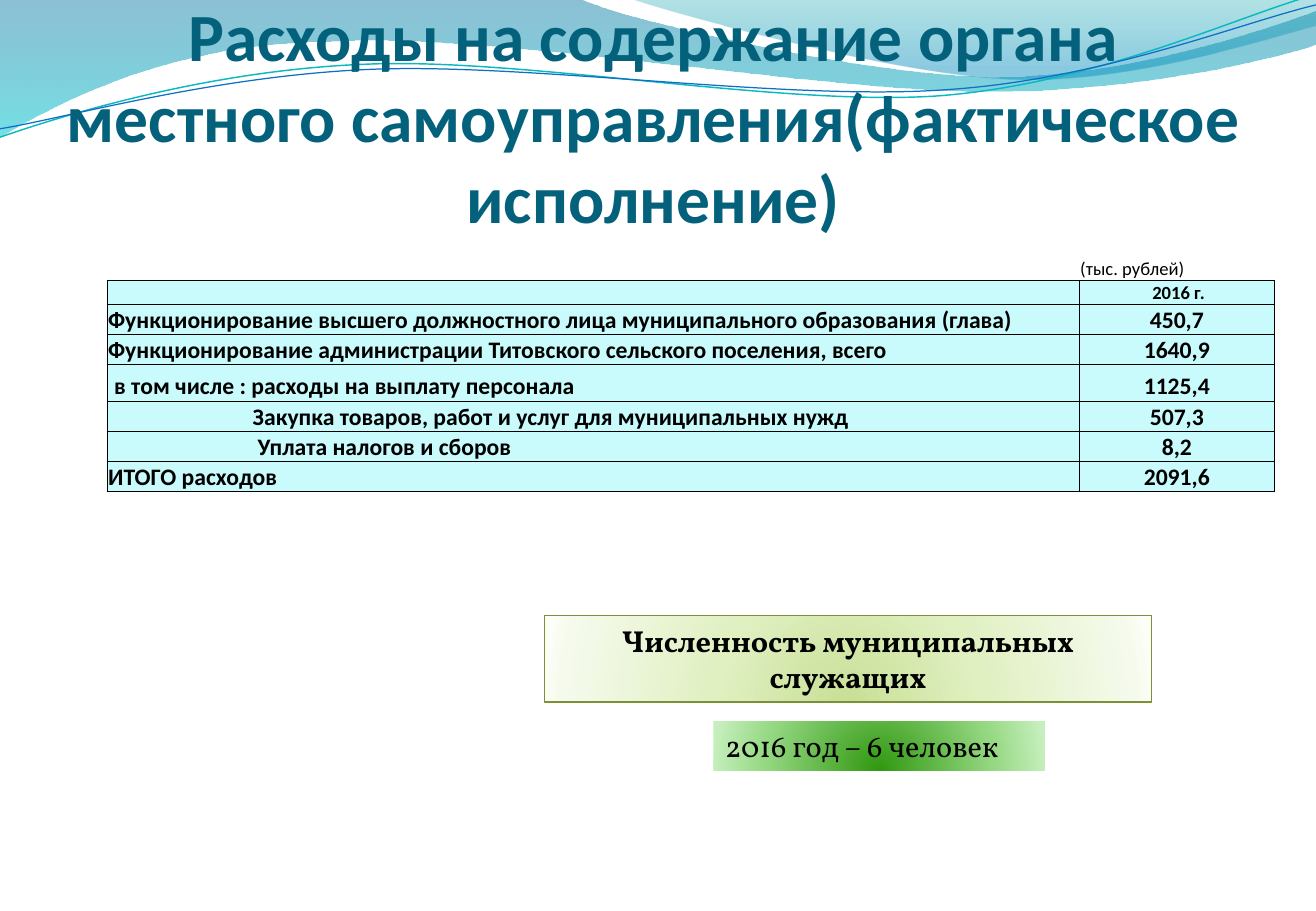
import pptx
import pptx.util
import pptx.dml.color
import pptx.enum.shapes
import pptx.enum.text
from lxml import etree
from pptx.oxml.ns import qn
from pptx.util import Inches

COLORS = {
    "background": "FFFFFF", "title": "04617B", "text": "000000",
    "cell": "C9FAFC", "border": "000000", "box_line": "7B9135",
    "teal_line": "0AB8BF", "blue_line": "0F6FC6",
}
# Gradient stops: position, colour, opacity (all in percent)
GRADIENTS = {
    "left_wave": [(0, "0074A1", 45), (100, "00C6CF", 55)],
    "right_wave": [(0, "00A1A9", 30), (80, "008BBF", 45)],
    "box": [(0, "C9DF97", 100), (43, "E0F0C1", 100), (93, "F5FAEC", 100), (100, "FCFEF8", 100)],
    "count": [(0, "319811", 100), (68, "95D882", 100), (100, "C6EFBD", 100)],
}
# Outlines: a pair is a straight segment, six numbers are a Bezier curve
LEFT_WAVE = [
    (0, -0.01), (4.77, -0.01), (5.15, 0.17, 7.19, 0.63, 8.22, 0.63),
    (9.24, 0.63, 10.38, 0.26, 10.83, 0.09), (10.85, 0.36),
    (10.65, 0.44, 9.42, 0.76, 8.08, 0.75), (6.74, 0.75, 4.14, 0.28, 2.79, 0.34),
    (1.4, 0.35, 0.5, 0.83, -0.01, 1.13)]
RIGHT_WAVE = [
    (5.19, -0.01), (5.52, 0.11, 7.39, 0.62, 8.33, 0.65),
    (9.27, 0.69, 10.42, 0.32, 10.83, 0.21), (10.83, 0)]
TEAL_CURVE = [
    (0, 1.13), (0.52, 0.95, 1.71, 0.58, 3, 0.53),
    (4.28, 0.47, 6.42, 0.88, 7.72, 0.79), (9.02, 0.69, 10.17, 0.14, 10.81, -0.04)]
BLUE_CURVE = [
    (0, 1.06), (0.51, 0.98, 1.77, 0.62, 3.07, 0.57),
    (4.36, 0.52, 6.47, 0.83, 7.76, 0.74), (9.06, 0.66, 10.2, 0.19, 10.83, 0.04)]
# Table rows: height, label, label indent, value
EXPENSES = [
    (0.19, "", 0, "(тыс. рублей)"),
    (0.19, "", 0, "2016 г."),
    (0.24, "Функционирование высшего должностного лица муниципального образования (глава)", 0, "450,7"),
    (0.24, "Функционирование администрации Титовского сельского поселения, всего", 0, "1640,9"),
    (0.3, "в том числе : расходы на выплату персонала", 0.05, "1125,4"),
    (0.25, "Закупка товаров, работ и услуг для муниципальных нужд", 1.19, "507,3"),
    (0.24, "Уплата налогов и сборов", 1.23, "8,2"),
    (0.24, "ИТОГО расходов", 0, "2091,6"),
]
ALIGN = pptx.enum.text.PP_ALIGN
ANCHOR = pptx.enum.text.MSO_ANCHOR
AUTO_SIZE = pptx.enum.text.MSO_AUTO_SIZE


def rgb(name):
    return pptx.dml.color.RGBColor.from_string(COLORS[name])


def add_color(parent, color, opacity=100):
    clr = etree.SubElement(parent, qn("a:srgbClr"), val=color)
    if opacity < 100:
        etree.SubElement(clr, qn("a:alpha"), val=str(opacity * 1000))


def set_gradient(sp, name, radial=False):
    sp.fill.gradient()
    grad = sp._element.spPr.find(qn("a:gradFill"))
    for child in list(grad):
        grad.remove(child)
    stops = etree.SubElement(grad, qn("a:gsLst"))
    for pos, color, opacity in GRADIENTS[name]:
        add_color(etree.SubElement(stops, qn("a:gs"), pos=str(pos * 1000)), color, opacity)
    if radial:
        circle = etree.SubElement(grad, qn("a:path"), path="circle")
        etree.SubElement(circle, qn("a:fillToRect"), l="50000", t="130000", r="50000", b="-30000")
    else:
        etree.SubElement(grad, qn("a:lin"), ang="5400000", scaled="0")


def set_line(sp, color, width):
    if color is None:
        sp.line.fill.background()
    else:
        sp.line.color.rgb = rgb(color)
        sp.line.width = pptx.util.Pt(width)


def set_font(p, name, size, color="text", bold=False, align=ALIGN.LEFT):
    p.alignment = align
    p.font.name, p.font.size, p.font.bold = name, pptx.util.Pt(size), bold
    p.font.color.rgb = rgb(color)


def bend_segments(sp, outline):
    """Join each three drawn segments of a curve into one Bezier segment."""
    nodes = iter(list(sp._element.iter(qn("a:lnTo"))))
    for segment in outline[1:]:
        group = [next(nodes) for _ in range(len(segment) // 2)]
        if len(group) == 3:
            curve = etree.Element(qn("a:cubicBezTo"))
            group[0].addprevious(curve)
            for node in group:
                curve.append(node[0])
                node.getparent().remove(node)


def add_wave(s, outline, gradient=None, line=None, width=0):
    points = [(Inches(seg[i]), Inches(seg[i + 1])) for seg in outline for i in range(0, len(seg), 2)]
    builder = s.shapes.build_freeform(*points[0])
    builder.add_line_segments(points[1:], close=gradient is not None)
    sp = builder.convert_to_shape()
    bend_segments(sp, outline)
    sp.shadow.inherit = False
    if gradient:
        set_gradient(sp, gradient)
    else:
        sp.fill.background()
    set_line(sp, line, width)


def add_title(s, text):
    title = s.shapes.title
    title.left, title.top, title.width, title.height = map(Inches, (0.5, 0.7, 9.75, 1.25))
    s.shapes._spTree.append(title._element)  # in front of the waves
    tf = title.text_frame
    tf.text = text
    tf.auto_size, tf.word_wrap = AUTO_SIZE.NONE, True
    tf.vertical_anchor = ANCHOR.BOTTOM
    tf.margin_left = tf.margin_right = tf.margin_bottom = 0
    tf.margin_top = Inches(0.05)
    set_font(tf.paragraphs[0], "Calibri", 40, "title", True, ALIGN.CENTER)


def set_borders(cell, sides):
    tcPr = cell._tc.get_or_add_tcPr()
    for side in sides:
        ln = etree.SubElement(tcPr, qn("a:ln" + side), w="6350")
        add_color(etree.SubElement(ln, qn("a:solidFill")), COLORS["border"])


def add_expenses_table(s):
    height = sum(row[0] for row in EXPENSES)
    frame = s.shapes.add_table(len(EXPENSES), 2, Inches(0.88), Inches(2.11), Inches(9.61), Inches(height))
    table = frame.table
    table.first_row = table.horz_banding = False
    # Plain table style without fills and borders
    table._tbl.tblPr.find(qn("a:tableStyleId")).text = "{2D5ABB26-0587-4C30-8999-92F81FD0307C}"
    table.columns[0].width, table.columns[1].width = Inches(8), Inches(1.61)
    for i, (row_height, label, indent, value) in enumerate(EXPENSES):
        table.rows[i].height = Inches(row_height)
        for j, text in enumerate((label, value)):
            cell = table.cell(i, j)
            cell.text = text
            cell.vertical_anchor = ANCHOR.BOTTOM
            cell.margin_left = Inches(0.01 + (0 if j else indent))
            cell.margin_right = cell.margin_top = Inches(0.01)
            cell.margin_bottom = 0
            centred = j == 1 and i > 0
            set_font(cell.text_frame.paragraphs[0], "Calibri", 14 if i > 1 else 11,
                     bold=i > 0, align=ALIGN.CENTER if centred else ALIGN.LEFT)
            set_borders(cell, "LRTB" if i else "B")
            if i:
                cell.fill.solid()
                cell.fill.fore_color.rgb = rgb("cell")
    # The year sits slightly right of centre
    table.cell(1, 1).margin_left = Inches(0.04)


def add_box(s, text, box, gradient, line=None, bold=False, align=ALIGN.LEFT):
    sp = s.shapes.add_shape(pptx.enum.shapes.MSO_SHAPE.RECTANGLE, *map(Inches, box))
    set_gradient(sp, gradient, radial=True)
    set_line(sp, line, 0.75)
    sp.shadow.inherit = False
    tf = sp.text_frame
    tf.text = text
    tf.word_wrap, tf.auto_size = True, AUTO_SIZE.SHAPE_TO_FIT_TEXT
    tf.vertical_anchor = ANCHOR.TOP
    set_font(tf.paragraphs[0], "Vollkorn", 18, bold=bold, align=align)


def main():
    prs = pptx.Presentation()
    prs.slide_width, prs.slide_height = Inches(10.83), Inches(7.5)
    s = prs.slides.add_slide(prs.slide_layouts[5])
    s.background.fill.solid()
    s.background.fill.fore_color.rgb = rgb("background")

    # Waves along the top
    add_wave(s, LEFT_WAVE, "left_wave")
    add_wave(s, RIGHT_WAVE, "right_wave")
    add_wave(s, TEAL_CURVE, line="teal_line", width=0.85)
    add_wave(s, BLUE_CURVE, line="blue_line", width=0.75)

    # Title and expenses
    add_title(s, "Расходы на содержание органа местного самоуправления(фактическое исполнение)")
    add_expenses_table(s)

    # Number of employees
    add_box(s, "Численность муниципальных служащих", (4.48, 5.07, 5, 0.71), "box",
            "box_line", True, ALIGN.CENTER)
    add_box(s, "2016 год – 6 человек", (5.87, 5.94, 2.73, 0.4), "count")
    prs.save("out.pptx")


if __name__ == "__main__":
    main()
